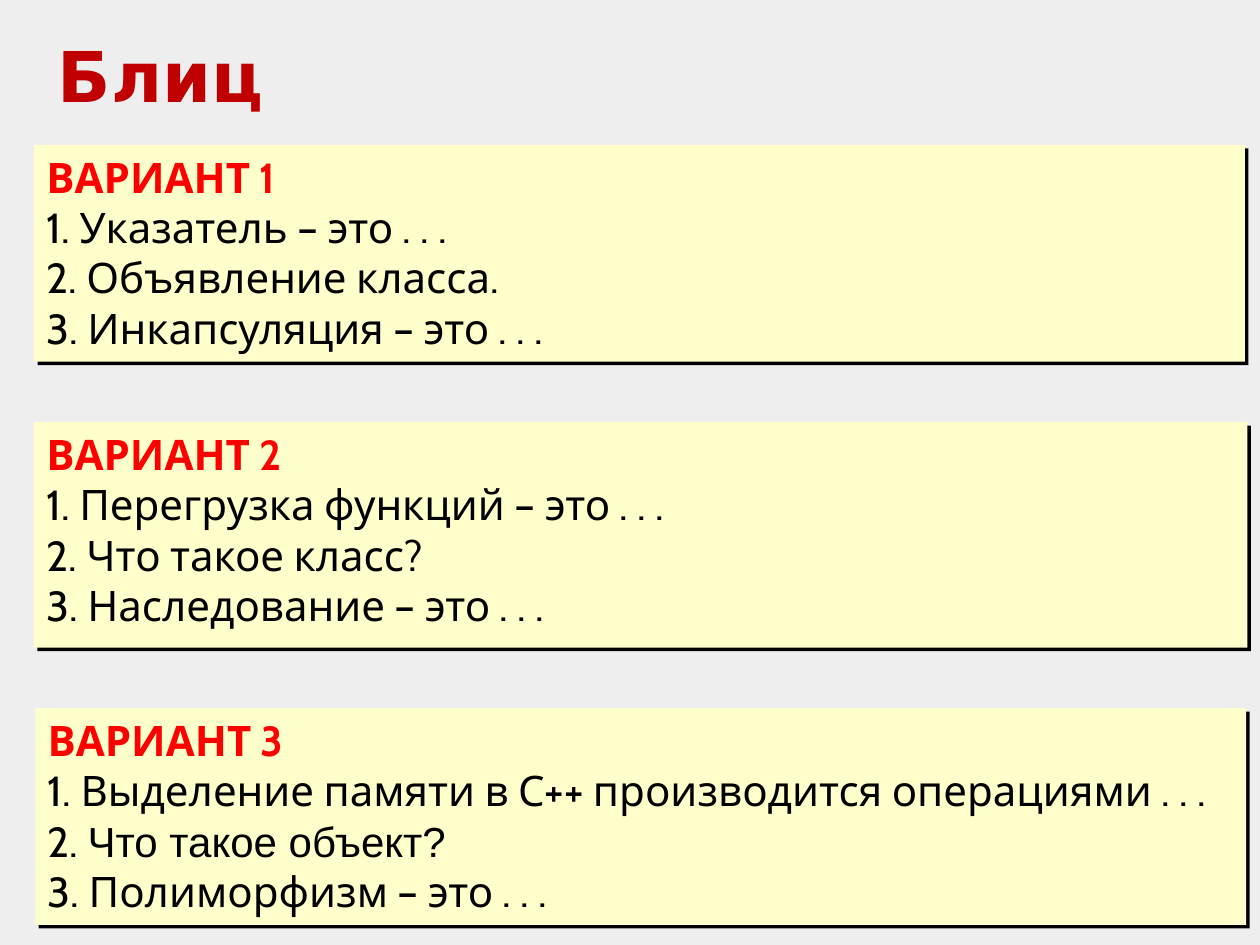
from lxml.etree import SubElement
from pptx import Presentation
from pptx.dml.color import RGBColor
from pptx.enum.shapes import MSO_SHAPE as SHAPE
from pptx.enum.text import MSO_ANCHOR as ANCHOR, PP_ALIGN as ALIGN
from pptx.oxml.ns import qn
from pptx.util import Inches, Pt


def rgb(value):
    return RGBColor.from_string(value)


class QuizSlide:
    """Holds the quiz style and the slide being built."""

    title_font, body_font, accent_font = "DejaVu Sans", "Cabin", "Arial"
    title_size, body_size = 40, 24
    background, card = "EEEEEE", "FFFFCC"
    title_color, heading_color, text_color = "C00000", "FF0000", "000000"
    shadow_color, shadow_distance, shadow_angle = "000000", 2.8, 45

    def __init__(self, prs):
        self.slide = prs.slides.add_slide(prs.slide_layouts[6])
        fill = self.slide.background.fill
        fill.solid()
        fill.fore_color.rgb = rgb(self.background)

    def format_run(self, r, font, size, color, bold=False):
        r.font.name = font
        r.font.size = Pt(size)
        r.font.bold = bold
        r.font.color.rgb = rgb(color)

    def add_title(self, text, left, top, width, height):
        box = self.slide.shapes.add_textbox(
            Inches(left), Inches(top), Inches(width), Inches(height))
        tf = box.text_frame
        tf.word_wrap = True
        tf.text = text
        self.format_run(tf.paragraphs[0].runs[0], self.title_font,
                        self.title_size, self.title_color, True)

    def add_shadow(self, sp):
        effects = SubElement(sp._element.spPr, qn("a:effectLst"))
        shadow = SubElement(
            effects, qn("a:outerShdw"), dist=str(Pt(self.shadow_distance)),
            dir=str(self.shadow_angle * 60000), algn="ctr", rotWithShape="0")
        SubElement(shadow, qn("a:srgbClr"), val=self.shadow_color)

    def add_card(self, heading, questions, left, top, width, height):
        sp = self.slide.shapes.add_shape(
            SHAPE.RECTANGLE, Inches(left), Inches(top), Inches(width), Inches(height))
        sp.fill.solid()
        sp.fill.fore_color.rgb = rgb(self.card)
        sp.line.fill.background()
        self.add_shadow(sp)
        tf = sp.text_frame
        tf.word_wrap = True
        tf.vertical_anchor = ANCHOR.TOP
        p = tf.paragraphs[0]
        p.text = heading
        p.alignment = ALIGN.LEFT
        self.format_run(p.runs[0], self.body_font, self.body_size,
                        self.heading_color, True)
        for number, (question, font) in enumerate(questions, 1):
            p = tf.add_paragraph()
            p.alignment = ALIGN.LEFT
            for text, name in ((f"{number}. ", self.body_font), (question, font)):
                r = p.add_run()
                r.text = text
                self.format_run(r, name, self.body_size, self.text_color)


def main():
    prs = Presentation()
    prs.slide_width, prs.slide_height = Inches(10), Inches(7.5)
    s = QuizSlide(prs)
    body, accent = s.body_font, s.accent_font
    variants = [
        ((0.27, 1.15, 9.61, 1.72), [
            ("Указатель – это . . .", body),
            ("Объявление класса.", body),
            ("Инкапсуляция – это . . .", body)]),
        ((0.27, 3.35, 9.63, 1.79), [
            ("Перегрузка функций – это . . .", body),
            ("Что такое класс?", body),
            ("Наследование – это . . .", body)]),
        ((0.28, 5.62, 9.61, 1.72), [
            ("Выделение памяти в С++ производится операциями . . .", body),
            ("Что такое объект?", accent),
            ("Полиморфизм – это . . .", body)]),
    ]
    for number, (place, questions) in enumerate(variants, 1):
        s.add_card(f"ВАРИАНТ {number}", questions, *place)
    s.add_title("Блиц", 0.36, 0.21, 9.28, 0.77)
    prs.save("out.pptx")


if __name__ == "__main__":
    main()
